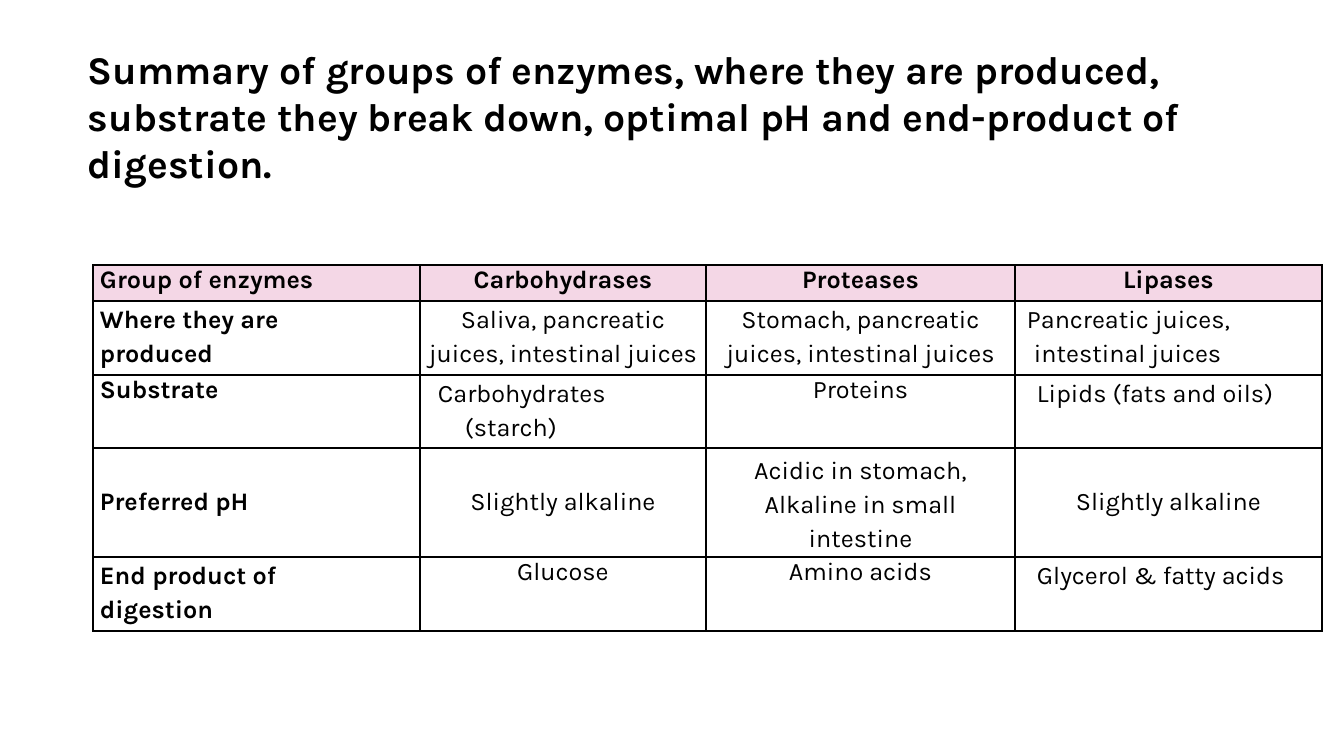
"""Build a slide that sums up the groups of digestive enzymes."""
from dataclasses import dataclass
from itertools import accumulate

from lxml.etree import SubElement as Sub
from pptx import Presentation
from pptx.dml.color import RGBColor as Rgb
from pptx.enum.text import MSO_ANCHOR as Anchor, PP_ALIGN as Align
from pptx.oxml.ns import qn
from pptx.util import Pt

TITLE = (
    "Summary of groups of enzymes, where they are produced, substrate they "
    "break down, optimal pH and end-product of digestion."
)
TITLE_BOX = (78, 40, 1188, 152)
LEFT, TOP = 93, 265
WIDTHS = [327, 286, 309, 307]
ROWS = [36, 74, 73, 109, 74]
PH_ROW = 3

# Each cell: text, alignment, left indent, first-line shift, right indent, line spacing
SIDE, MID = Align.LEFT, Align.CENTER
COLUMNS = [
    [
        ("Group of enzymes", SIDE, 7, 0, 0, 1),
        ("Where they are produced", SIDE, 7, 0, 50, 1.15),
        ("Substrate", SIDE, 7, 0, 0, 1),
        ("Preferred pH", SIDE, 7, 0, 0, 1),
        ("End product of digestion", SIDE, 7, 0, 50, 1.15),
    ],
    [
        ("Carbohydrases", MID, 8, 0, 8, 1),
        ("Saliva, pancreatic juices, intestinal juices", MID, 8, 0, 8, 1.15),
        ("Carbohydrates (starch)", SIDE, 45, -27, 50, 1.15),
        ("Slightly alkaline", MID, 8, 0, 8, 1),
        ("Glucose", MID, 8, 0, 8, 1),
    ],
    [
        ("Proteases", MID, 11, 0, 11, 1),
        ("Stomach, pancreatic juices, intestinal juices", MID, 16, 0, 16, 1.15),
        ("Proteins", MID, 11, 0, 11, 1),
        ("Acidic in stomach, Alkaline in small intestine", MID, 11, 0, 11, 1.15),
        ("Amino acids", MID, 11, 0, 11, 1),
    ],
    [
        ("Lipases", MID, 11, 0, 11, 1),
        ("Pancreatic juices, intestinal juices", SIDE, 19, -7, 0, 1.15),
        ("Lipids (fats and oils)", SIDE, 63, -41, 0, 1.15),
        ("Slightly alkaline", MID, 11, 0, 11, 1),
        ("Glycerol & fatty acids", SIDE, 59, -37, 0, 1.15),
    ],
]


@dataclass(frozen=True)
class Theme:
    """Hold the colours, font and type sizes."""
    font: str = "Karla"
    ink: str = "000000"
    head: str = "F4D7E6"
    title: int = 28
    body: int = 18
    rule: int = 1


THEME = Theme()


def px(n):
    """Turn px into EMU."""
    return round(n * 914400 / 100.8)


def style(para, size, bold):
    """Set the font of a paragraph."""
    font = para.font
    font.name, font.size, font.bold = THEME.font, Pt(size), bold
    font.color.rgb = Rgb.from_string(THEME.ink)


def frame(cell):
    """Draw the four borders of a cell."""
    props = cell._tc.get_or_add_tcPr()
    for side in ("lnL", "lnR", "lnT", "lnB"):
        line = Sub(props, qn(f"a:{side}"), w=str(Pt(THEME.rule)))
        Sub(Sub(line, qn("a:solidFill")), qn("a:srgbClr"), val=THEME.ink)


def fill(cell, item, head, bold):
    """Put text, borders and fill into a cell."""
    text, align, left, shift, right, space = item
    cell.margin_left = cell.margin_right = 0
    cell.margin_top = cell.margin_bottom = 0
    frame(cell)
    if head:
        cell.fill.solid()
        cell.fill.fore_color.rgb = Rgb.from_string(THEME.head)
    else:
        cell.fill.background()
    cell.text = text
    para = cell.text_frame.paragraphs[0]
    para.alignment, para.line_spacing = align, float(space)
    props = para._p.get_or_add_pPr()
    for key, val in (("marL", left), ("marR", right), ("indent", shift)):
        props.set(key, str(px(val)))
    style(para, THEME.body, bold)


def add_column(slide, left, width, items, label):
    """Add one column of the summary as a table."""
    box = slide.shapes.add_table(
        len(ROWS), 1, px(left), px(TOP), px(width), px(sum(ROWS))
    )
    table = box.table
    table.first_row = table.horz_banding = False
    for i, (high, item) in enumerate(zip(ROWS, items)):
        table.rows[i].height = px(high)
        cell = table.cell(i, 0)
        fill(cell, item, i == 0, label or i == 0)
        if i == PH_ROW:
            cell.vertical_anchor = Anchor.MIDDLE


def main():
    """Build and save the slide."""
    deck = Presentation()
    deck.slide_width, deck.slide_height = px(1344), px(756)
    slide = deck.slides.add_slide(deck.slide_layouts[6])
    lefts = accumulate(WIDTHS, initial=LEFT)
    for i, (left, width, items) in enumerate(zip(lefts, WIDTHS, COLUMNS)):
        add_column(slide, left, width, items, i == 0)
    frame_box = slide.shapes.add_textbox(*map(px, TITLE_BOX)).text_frame
    frame_box.word_wrap = True
    frame_box.text = TITLE
    style(frame_box.paragraphs[0], THEME.title, True)
    deck.save("out.pptx")


if __name__ == "__main__":
    main()
